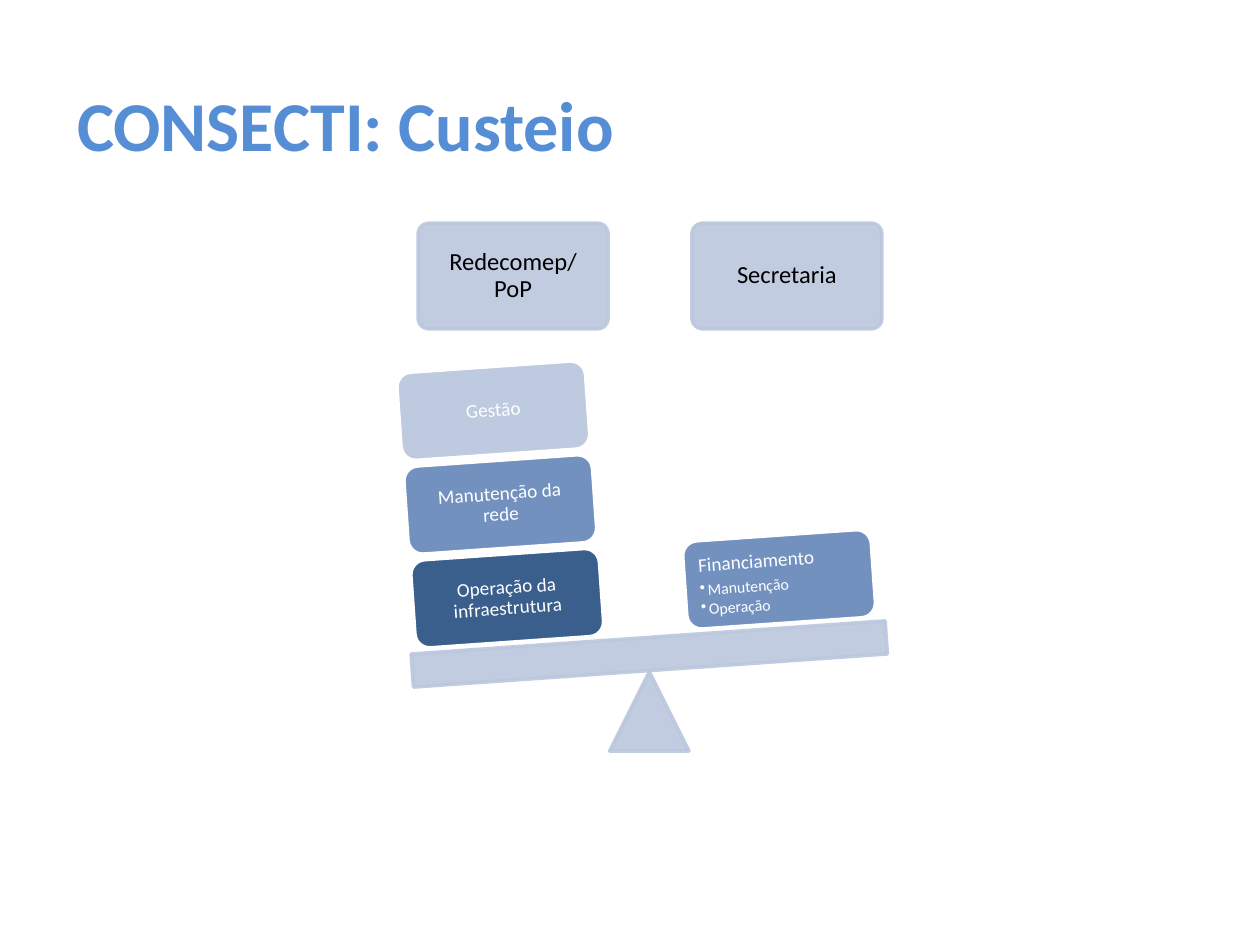
import pptx
import pptx.dml.color
import pptx.enum.shapes
import pptx.enum.text
import pptx.oxml.ns
import pptx.util
from lxml import etree

Cm = pptx.util.Cm
Pt = pptx.util.Pt
SHAPE = pptx.enum.shapes.MSO_SHAPE
ALIGN = pptx.enum.text.PP_ALIGN
ANCHOR = pptx.enum.text.MSO_ANCHOR
qn = pptx.oxml.ns.qn

PALE, SKY, MID, DARK = "BBC7DE", "BECADF", "7391BF", "3A5F8C"
WHITE, BLACK, TITLE = "FFFFFF", "000000", "558ED5"


def rgb(hex_color):
    return pptx.dml.color.RGBColor.from_string(hex_color)


def set_opacity(shape, percent):
    """Apply the opacity to both the fill and the outline."""
    for color in shape._element.spPr.iter(qn("a:srgbClr")):
        etree.SubElement(color, qn("a:alpha"), val=str(percent * 1000))


class BalanceSlide:
    font = "Calibri"
    tilt = 356
    line_width = Pt(2)

    def __init__(self, presentation):
        self.slide = presentation.slides.add_slide(presentation.slide_layouts[5])

    def fill_paragraph(self, paragraph, text, size, color, bold=False):
        paragraph.text = text
        formats = {"name": self.font, "size": Pt(size), "bold": bold}
        for name, value in formats.items():
            setattr(paragraph.font, name, value)
        paragraph.font.color.rgb = rgb(color)

    def title(self, text):
        heading = self.slide.shapes.title
        places = {"left": 1.3, "top": 1.52, "width": 22.86, "height": 3.18}
        for name, value in places.items():
            setattr(heading, name, Cm(value))
        heading.text_frame.vertical_anchor = ANCHOR.TOP
        paragraph = heading.text_frame.paragraphs[0]
        paragraph.alignment = ALIGN.LEFT
        self.fill_paragraph(paragraph, text, 40, TITLE, bold=True)

    def solid(self, kind, left, top, width, height, fill, line, rotation=0):
        shape = self.slide.shapes.add_shape(
            kind, Cm(left), Cm(top), Cm(width), Cm(height))
        shape.shadow.inherit = False
        shape.rotation = rotation
        shape.fill.solid()
        shape.fill.fore_color.rgb = rgb(fill)
        shape.line.color.rgb = rgb(line)
        shape.line.width = self.line_width
        return shape

    def frame(self, kind, left, top, width, height, rotation=0):
        """Add a translucent part of the scale."""
        shape = self.solid(kind, left, top, width, height, PALE, PALE, rotation)
        set_opacity(shape, 90)
        return shape

    def label(self, shape, text, size, color, align=ALIGN.CENTER, anchor=ANCHOR.MIDDLE):
        frame = shape.text_frame
        frame.word_wrap = True
        frame.vertical_anchor = anchor
        for side in ("left", "right", "top", "bottom"):
            setattr(frame, f"margin_{side}", Cm(0.21))
        paragraph = frame.paragraphs[0]
        paragraph.alignment = align
        paragraph.line_spacing = 0.9
        self.fill_paragraph(paragraph, text, size, color)

    def header(self, left, text):
        box = self.frame(SHAPE.ROUNDED_RECTANGLE, left, 4.5, 3.83, 2.13)
        box.adjustments[0] = 0.1
        self.label(box, text, 14, BLACK)

    def weight(self, left, top, text, fill, bullets=()):
        block = self.solid(SHAPE.ROUNDED_RECTANGLE, left, top, 3.81, 1.78,
                           fill, WHITE, self.tilt)
        if not bullets:
            self.label(block, text, 11, WHITE)
            return
        self.label(block, text, 11, WHITE, ALIGN.LEFT, ANCHOR.TOP)
        block.text_frame.paragraphs[0].space_after = Pt(3.5)
        for bullet in bullets:
            self.bullet(block.text_frame.add_paragraph(), bullet)

    def bullet(self, paragraph, text):
        paragraph.level = 1
        paragraph.alignment = ALIGN.LEFT
        paragraph.line_spacing = 0.9
        paragraph.space_after = Pt(1.35)
        properties = paragraph._p.get_or_add_pPr()
        properties.set("marL", str(Cm(0.16)))
        properties.set("indent", str(Cm(-0.16)))
        etree.SubElement(properties, qn("a:buChar"), char="•")
        self.fill_paragraph(paragraph, text, 9, WHITE)


def main():
    presentation = pptx.Presentation()
    presentation.slide_width, presentation.slide_height = Cm(25.4), Cm(19.05)
    balance = BalanceSlide(presentation)
    balance.title("CONSECTI: Custeio")

    balance.header(8.43, "Redecomep/PoP")
    balance.header(13.95, "Secretaria")

    balance.frame(SHAPE.ISOSCELES_TRIANGLE, 12.29, 13.54, 1.6, 1.6)
    balance.frame(SHAPE.RECTANGLE, 8.3, 12.85, 9.58, 0.67, balance.tilt)

    costs = [("Operação da infraestrutura", DARK),
             ("Manutenção da rede", MID),
             ("Gestão", SKY)]
    for step, (cost, fill) in enumerate(costs):
        balance.weight(8.32 - 0.14 * step, 11.17 - 1.89 * step, cost, fill)
    balance.weight(13.8, 10.79, "Financiamento", MID, ("Manutenção", "Operação"))

    presentation.save("out.pptx")


if __name__ == "__main__":
    main()
